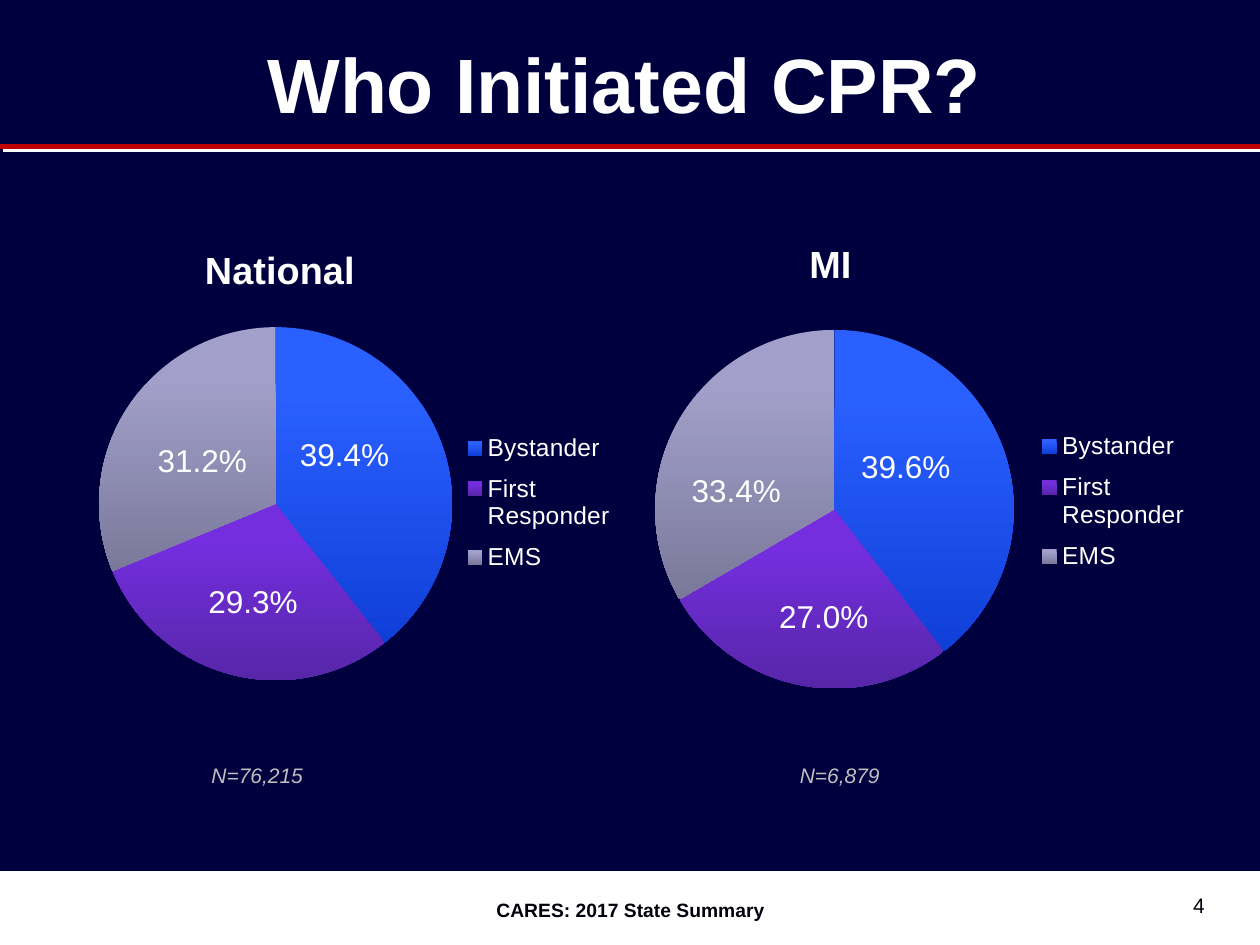
from dataclasses import dataclass

from lxml.etree import SubElement
from pptx import Presentation
from pptx.chart.data import CategoryChartData
from pptx.dml.color import RGBColor
from pptx.enum.chart import XL_CHART_TYPE, XL_LABEL_POSITION, XL_LEGEND_POSITION
from pptx.enum.shapes import MSO_CONNECTOR, MSO_SHAPE
from pptx.enum.text import MSO_ANCHOR, PP_ALIGN
from pptx.oxml import parse_xml
from pptx.oxml.ns import nsdecls, qn
from pptx.util import Inches, Pt

NAVY = RGBColor(0x00, 0x00, 0x3E)
WHITE = RGBColor(0xFF, 0xFF, 0xFF)
INK = RGBColor(0x00, 0x00, 0x0C)
RED = RGBColor(0xC0, 0x00, 0x00)
GREY = RGBColor(0xBF, 0xBF, 0xBF)
# Light and dark end of each slice
SLICES = [
    (RGBColor(0x2A, 0x60, 0xFF), RGBColor(0x10, 0x3F, 0xD8)),
    (RGBColor(0x74, 0x2E, 0xE0), RGBColor(0x57, 0x26, 0xA8)),
    (RGBColor(0xA2, 0xA0, 0xCA), RGBColor(0x7A, 0x79, 0x9A)),
]
CATEGORIES = ["Bystander", "First Responder", "EMS"]
FONT = "Arial"


@dataclass
class Pie:
    title: str
    box: tuple
    values: tuple
    title_at: tuple
    legend_at: tuple
    label_shifts: tuple
    note: str
    note_left: float


PIES = [
    Pie("MI", (4.58, 1.17, 5.42, 5.25), (39.6, 27.0, 33.4), (0.33, 0.13),
        (0.67, 0.41, 0.23, 0.25), ((-0.02, -0.02), (0.01, 0.03), (-0.03, 0.04)),
        "N=6,879", 6.25),
    Pie("National", (0.02, 1.17, 5.75, 5.17), (39.4, 29.3, 31.2), (0.27, 0.14),
        (0.63, 0.42, 0.22, 0.25), ((-0.02, -0.03), (0, 0.02), (0, 0.01)),
        "N=76,215", 1.58),
]


def style(font, size: float, color: RGBColor, bold=False, italic=False) -> None:
    font.name, font.size = FONT, Pt(size)
    font.bold, font.italic = bold, italic
    font.color.rgb = color


def add_text(slide, text: str, box: tuple, size: float, color: RGBColor,
             align=PP_ALIGN.LEFT, anchor=MSO_ANCHOR.TOP, **look):
    tf = slide.shapes.add_textbox(*map(Inches, box)).text_frame
    tf.word_wrap, tf.vertical_anchor = True, anchor
    tf.text = text
    p = tf.paragraphs[0]
    p.alignment = align
    style(p.runs[0].font, size, color, **look)


def make_layout(place: tuple, edge=True, inner=False):
    """Manual chart layout: x, y and, if given, width and height."""
    layout = parse_xml(f"<c:layout {nsdecls('c')}><c:manualLayout/></c:layout>")
    parts = [("layoutTarget", "inner")] if inner else []
    if edge:
        parts += [("xMode", "edge"), ("yMode", "edge")]
    parts += zip("xywh", place)
    for tag, value in parts:
        SubElement(layout[0], qn(f"c:{tag}")).set("val", str(value))
    return layout


def place_part(part, layout, after: str) -> None:
    for old in part.findall(qn("c:layout")):
        part.remove(old)
    previous = part.find(qn(after))
    if previous is None:
        part.insert(0, layout)
    else:
        previous.addnext(layout)


def add_pie(slide, pie: Pie) -> None:
    data = CategoryChartData()
    data.categories = CATEGORIES
    data.add_series("Series 1", pie.values)
    chart = slide.shapes.add_chart(
        XL_CHART_TYPE.PIE, *map(Inches, pie.box), data).chart
    style(chart.font, 18, WHITE)

    # Title and legend
    chart.has_title = True
    title = chart.chart_title
    title.text_frame.text = pie.title
    style(title.text_frame.paragraphs[0].runs[0].font, 21.6, WHITE, bold=True)
    title.include_in_layout = False
    chart.has_legend = True
    legend = chart.legend
    legend.position = XL_LEGEND_POSITION.RIGHT
    legend.include_in_layout = False
    style(legend.font, 14, WHITE)

    # Slices and their percentages
    plot = chart.plots[0]
    plot.vary_by_categories = True
    series = plot.series[0]
    labels = series.data_labels
    labels.show_percentage, labels.show_value = True, False
    labels.number_format, labels.number_format_is_linked = "0.0%", False
    style(labels.font, 18, WHITE)
    for i, colors in enumerate(SLICES):
        point = series.points[i]
        fill = point.format.fill
        fill.gradient()
        fill.gradient_angle = 270
        for stop, color, pos in zip(fill.gradient_stops, colors, (0.2, 1)):
            stop.color.rgb, stop.position = color, pos
        point.format.line.fill.background()
        label = point.data_label
        label.position = XL_LABEL_POSITION.CENTER
        style(label.font, 18, WHITE)

    root = plot._element.getroottree().getroot()
    for label, shift in zip(root.iter(qn("c:dLbl")), pie.label_shifts):
        label.find(qn("c:showVal")).set("val", "0")
        label.find(qn("c:showPercent")).set("val", "1")
        label.find(qn("c:idx")).addnext(parse_xml(
            f'<c:numFmt {nsdecls("c")} formatCode="0.0%" sourceLinked="0"/>'))
        place_part(label, make_layout(shift, edge=False), "c:idx")

    # Positions inside the chart
    body = root.find(qn("c:chart"))
    place_part(body.find(qn("c:title")), make_layout(pie.title_at), "c:tx")
    place_part(body.find(qn("c:legend")), make_layout(pie.legend_at), "c:legendPos")
    place_part(body.find(qn("c:plotArea")),
               make_layout((0.103, 0.276, 0.548, 0.542), inner=True), "c:none")


def add_rule(slide) -> None:
    line = slide.shapes.add_connector(
        MSO_CONNECTOR.STRAIGHT, 0, Inches(1.16), Inches(10), Inches(1.16))
    line.line.color.rgb, line.line.width = RED, Pt(3)
    line._element.spPr.append(parse_xml(
        f'<a:effectLst {nsdecls("a")}><a:outerShdw blurRad="0" dist="{Pt(2.8)}" '
        f'dir="2700000" algn="tl" rotWithShape="0"><a:srgbClr val="{WHITE}"/>'
        '</a:outerShdw></a:effectLst>'))


def main() -> None:
    prs = Presentation()
    prs.slide_width, prs.slide_height = Inches(10), Inches(7.5)
    slide = prs.slides.add_slide(prs.slide_layouts[5])
    slide.background.fill.solid()
    slide.background.fill.fore_color.rgb = NAVY

    # Footer
    band = slide.shapes.add_shape(
        MSO_SHAPE.RECTANGLE, 0, Inches(6.92), Inches(10), Inches(0.58))
    band.shadow.inherit = False
    band.fill.solid()
    band.fill.fore_color.rgb = band.line.color.rgb = WHITE
    band.line.width = Pt(0.75)
    add_text(slide, "CARES: 2017 State Summary", (3.42, 7.08, 3.17, 0.29),
             11, INK, PP_ALIGN.CENTER, bold=True)
    add_text(slide, "4", (7.33, 7, 2.33, 0.33), 12, INK,
             PP_ALIGN.RIGHT, MSO_ANCHOR.BOTTOM)

    # Title
    title = slide.shapes.title
    title.left, title.top = Inches(0.13), Inches(0.03)
    title.width, title.height = Inches(9.66), Inches(1.25)
    tf = title.text_frame
    tf.text = "Who Initiated CPR?"
    tf.vertical_anchor = MSO_ANCHOR.MIDDLE
    tf.paragraphs[0].alignment = PP_ALIGN.CENTER
    style(tf.paragraphs[0].runs[0].font, 44, WHITE, bold=True)
    add_rule(slide)

    # Charts with sample sizes
    for pie in PIES:
        add_pie(slide, pie)
        add_text(slide, pie.note, (pie.note_left, 6, 1.43, 0.3), 12, GREY, italic=True)

    prs.save("out.pptx")


if __name__ == "__main__":
    main()
